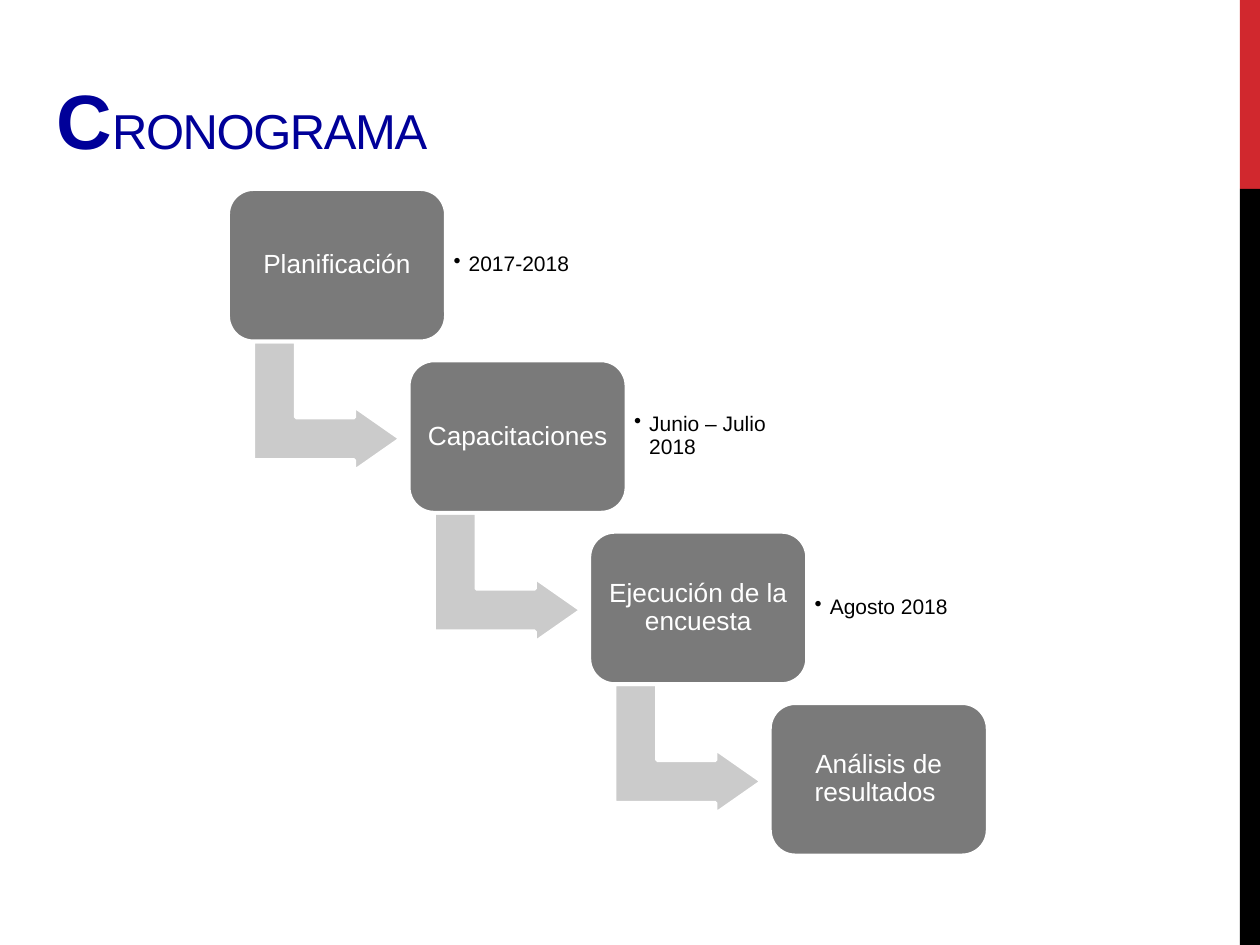
from lxml import etree
from pptx import Presentation
from pptx.dml.color import RGBColor
from pptx.enum.shapes import MSO_SHAPE
from pptx.enum.text import MSO_ANCHOR, PP_ALIGN
from pptx.oxml.ns import qn
from pptx.util import Inches, Pt

RECT = MSO_SHAPE.RECTANGLE
ROUNDED = MSO_SHAPE.ROUNDED_RECTANGLE
BENT_ARROW = MSO_SHAPE.BENT_UP_ARROW
MIDDLE, BOTTOM = MSO_ANCHOR.MIDDLE, MSO_ANCHOR.BOTTOM
LEFT, CENTER = PP_ALIGN.LEFT, PP_ALIGN.CENTER

WIDTH, HEIGHT = 10, 7.5
COLORS = {
    "red": "D1282E", "black": "000000", "white": "FFFFFF",
    "title": "000099", "step": "7A7A7A", "arrow": "CBCBCB",
}

# Staircase grid: origin of the first step and pitch from step to step
START_X, START_Y = 1.81, 1.5
COLUMN, ROW = 4.3 / 3, 1.36
STEP_W, STEP_H = 1.73, 1.21

STEPS = [
    ("Planificación", "2017-2018"),
    ("Capacitaciones", "Junio – Julio 2018"),
    ("Ejecución de la encuesta", "Agosto 2018"),
    ("Análisis de resultados ", None),
]


class TimelineSlide:
    """Holds the style and the current slide."""

    font = "Arial"
    inset = 0.06
    outline = 2.25

    def __init__(self, deck):
        self.page = deck.slides.add_slide(deck.slide_layouts[6])

    def color(self, name):
        return RGBColor.from_string(COLORS[name])

    def shape(self, kind, at, fill, line=None, adjust=()):
        shape = self.page.shapes.add_shape(kind, *map(Inches, at))
        shape.shadow.inherit = False
        shape.fill.solid()
        shape.fill.fore_color.rgb = self.color(fill)
        if line:
            shape.line.color.rgb = self.color(line)
            shape.line.width = Pt(self.outline)
        else:
            shape.line.fill.background()
        for index, value in enumerate(adjust):
            shape.adjustments[index] = value
        return shape

    def set_font(self, font, size, color, bold=False):
        font.name, font.size, font.bold = self.font, Pt(size), bold
        font.color.rgb = self.color(color)

    def label(self, shape, text, size, color, align):
        frame = shape.text_frame
        frame.word_wrap = True
        frame.vertical_anchor = MIDDLE
        frame.margin_left = frame.margin_right = Inches(self.inset)
        frame.margin_top = frame.margin_bottom = Inches(self.inset)
        para = frame.paragraphs[0]
        para.text = text
        para.alignment = align
        para.line_spacing = 0.9
        self.set_font(para.font, size, color)
        return para

    def title(self, at, parts):
        box = self.page.shapes.add_textbox(*map(Inches, at))
        box.text_frame.word_wrap = True
        box.text_frame.vertical_anchor = BOTTOM
        para = box.text_frame.paragraphs[0]
        for text, size, bold in parts:
            span = para.add_run()
            span.text = text
            self.set_font(span.font, size, "title", bold)
            span._r.get_or_add_rPr().set("spc", "-80")

    def step(self, x, y, text):
        box = self.shape(ROUNDED, (x, y, STEP_W, STEP_H), "step", "white", [0.167])
        self.label(box, text, 15, "white", CENTER)

    def date(self, x, y, text):
        box = self.page.shapes.add_textbox(*map(Inches, (x, y, 1.26, 0.98)))
        para = self.label(box, text, 12, "black", LEFT)
        properties = para._p.get_or_add_pPr()
        indent = Inches(0.12)
        properties.set("marL", str(indent))
        properties.set("indent", str(-indent))
        bullet = etree.Element(qn("a:buChar"), char="•")
        properties.find(qn("a:defRPr")).addprevious(bullet)

    def arrow(self, x, y):
        arrow = self.shape(BENT_ARROW, (x, y, 1.03, 1.17), "arrow", "white",
                           [0.328, 0.25, 0.358])
        arrow.rotation = 90


def main():
    deck = Presentation()
    deck.slide_width, deck.slide_height = Inches(WIDTH), Inches(HEIGHT)
    slide = TimelineSlide(deck)

    # Side band: red top fifth, black below
    band_x, band_w, split = 9.84, 0.16, HEIGHT / 5
    slide.shape(RECT, (band_x, 0, band_w, split), "red")
    slide.shape(RECT, (band_x, split, band_w, HEIGHT - split), "black")

    # Title with a large initial
    slide.title((0.35, 0.24, 6.33, 1.12), [("C", 44, True), ("RONOGRAMA", 28, False)])

    # Descending steps, each with its date and an arrow to the next
    for index, (name, date) in enumerate(STEPS):
        x, y = START_X + index * COLUMN, START_Y + index * ROW
        if index < len(STEPS) - 1:
            slide.arrow(x + 0.27, y + 1.14)
        slide.step(x, y, name)
        if date:
            slide.date(x + STEP_W, y + 0.11, date)

    deck.save("out.pptx")


if __name__ == "__main__":
    main()
